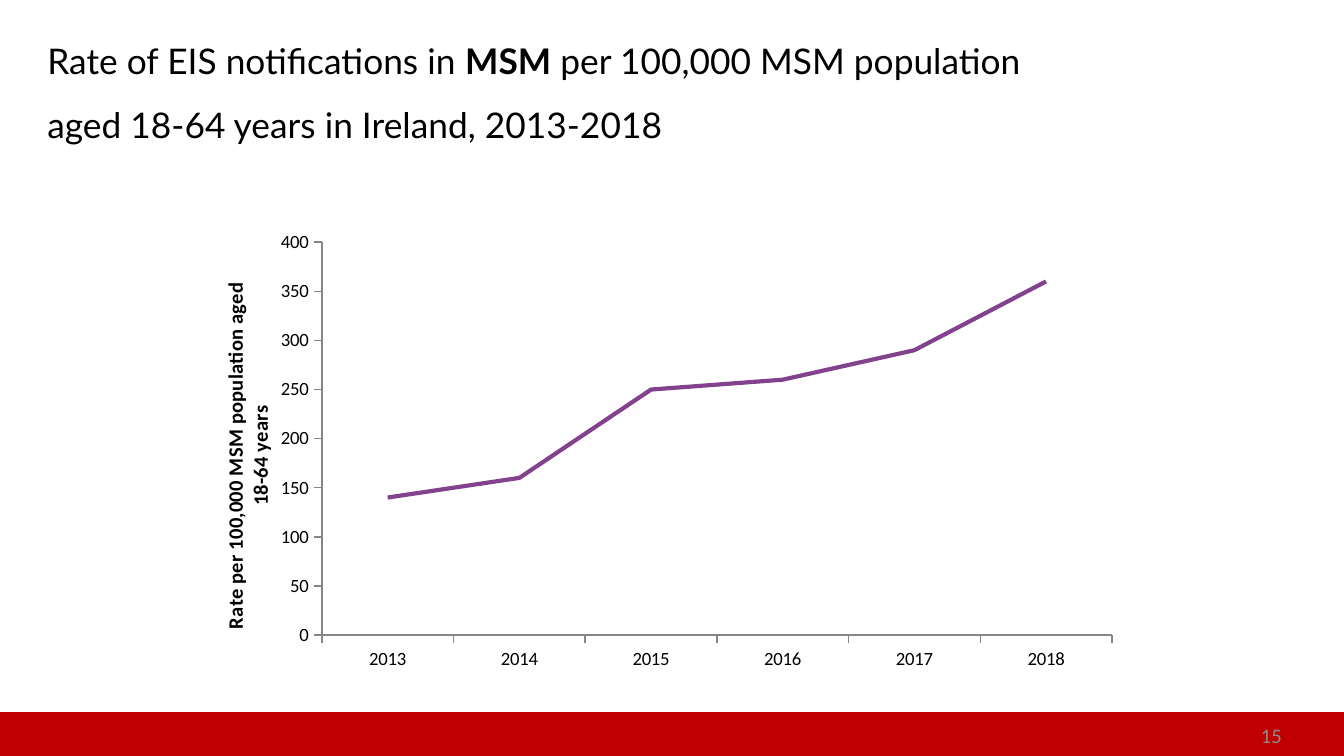
from typing import NamedTuple

from lxml.etree import SubElement
from pptx import Presentation
from pptx.chart.data import CategoryChartData
from pptx.dml.color import RGBColor
from pptx.enum.chart import XL_CHART_TYPE, XL_TICK_MARK
from pptx.enum.shapes import MSO_SHAPE
from pptx.enum.text import MSO_ANCHOR, PP_ALIGN
from pptx.oxml.ns import qn
from pptx.util import Emu, Pt

EMU_PER_PX = 914400 / 134.4
COLORS = {
    "bar": "C00000",
    "text": "000000",
    "page_number": "8C8C8C",
    "rate": "82428D",
    "axis": "868686",
}
RATES = {"2013": 140, "2014": 160, "2015": 250, "2016": 260, "2017": 290, "2018": 360}


class Area(NamedTuple):
    left: int
    top: int
    width: int
    height: int

    def emu(self) -> list[Emu]:
        return [px(length) for length in self]


class Piece(NamedTuple):
    text: str
    bold: bool = False


BAR = Area(0, 714, 1344, 42)
TITLE = Area(34, 20, 1042, 124)
PAGE_NUMBER = Area(982, 714, 313, 42)
CHART = Area(179, 224, 952, 457)
PLOT = Area(325, 243, 787, 394)
AXIS_TITLE = Area(213, 279, 45, 346)


def px(length: int) -> Emu:
    return Emu(round(length * EMU_PER_PX))


def color(name: str) -> RGBColor:
    return RGBColor.from_string(COLORS[name])


def style_font(font, typeface: str, size: float, color_name: str, bold: bool = False) -> None:
    font.name = typeface
    font.size = Pt(size)
    font.bold = bold
    font.color.rgb = color(color_name)


def add_bar(page) -> None:
    bar = page.shapes.add_shape(MSO_SHAPE.RECTANGLE, *BAR.emu())
    bar.shadow.inherit = False
    bar.fill.solid()
    bar.fill.fore_color.rgb = color("bar")
    bar.line.color.rgb = color("bar")
    bar.line.width = Pt(2)


def add_text(page, area: Area, pieces: list[Piece], typeface: str, size: float,
             color_name: str, alignment: PP_ALIGN, line_spacing: float = 1.0) -> None:
    box = page.shapes.add_textbox(*area.emu())
    frame = box.text_frame
    frame.word_wrap = True
    frame.vertical_anchor = MSO_ANCHOR.MIDDLE
    para = frame.paragraphs[0]
    para.alignment = alignment
    para.line_spacing = line_spacing
    for piece in pieces:
        span = para.add_run()
        span.text = piece.text
        style_font(span.font, typeface, size, color_name, piece.bold)


def place(parent, before: str, area: Area, with_size: bool) -> None:
    """Fix a chart part at an area of the slide, as fractions of the chart."""
    layout = parent.find(qn("c:layout"))
    if layout is None:
        layout = SubElement(parent, qn("c:layout"))
        parent.find(qn(before)).addprevious(layout)
    for child in list(layout):
        layout.remove(child)
    manual = SubElement(layout, qn("c:manualLayout"))
    settings = {"xMode": "edge", "yMode": "edge"}
    if with_size:
        settings = {"layoutTarget": "inner"} | settings
    settings["x"] = f"{(area.left - CHART.left) / CHART.width:.2f}"
    settings["y"] = f"{(area.top - CHART.top) / CHART.height:.2f}"
    if with_size:
        settings["w"] = f"{area.width / CHART.width:.2f}"
        settings["h"] = f"{area.height / CHART.height:.2f}"
    for tag, value in settings.items():
        SubElement(manual, qn(f"c:{tag}")).set("val", value)


def add_rate_chart(page) -> None:
    data = CategoryChartData(number_format="0")
    data.categories = list(RATES)
    data.add_series("Series 1", list(RATES.values()))
    chart = page.shapes.add_chart(XL_CHART_TYPE.LINE, *CHART.emu(), data).chart
    chart.has_legend = False
    chart.has_title = False
    style_font(chart.font, "Calibri", 10, "text")

    plot = chart.plots[0]
    plot.vary_by_categories = False
    series = plot.series[0]
    series.smooth = False
    series.format.line.color.rgb = color("rate")
    series.format.line.width = Pt(2.25)

    for axis in (chart.category_axis, chart.value_axis):
        axis.has_major_gridlines = False
        axis.major_tick_mark = XL_TICK_MARK.OUTSIDE
        axis.minor_tick_mark = XL_TICK_MARK.NONE
        axis.format.line.color.rgb = color("axis")
        axis.format.line.width = Pt(0.75)

    value_axis = chart.value_axis
    value_axis.minimum_scale = 0
    value_axis.maximum_scale = 400
    value_axis.major_unit = 50
    value_axis.tick_labels.number_format = "0"
    value_axis.tick_labels.number_format_is_linked = False
    para = value_axis.axis_title.text_frame.paragraphs[0]
    span = para.add_run()
    span.text = "Rate per 100,000 MSM population aged 18-64 years"
    style_font(span.font, "Calibri", 11, "text", bold=True)

    plot_area = chart.element.find(f".//{qn('c:plotArea')}")
    place(plot_area, "c:lineChart", PLOT, with_size=True)
    axis_title = plot_area.find(f"{qn('c:valAx')}/{qn('c:title')}")
    place(axis_title, "c:overlay", AXIS_TITLE, with_size=False)


def main() -> None:
    deck = Presentation()
    deck.slide_width, deck.slide_height = px(1344), px(756)
    page = deck.slides.add_slide(deck.slide_layouts[6])
    add_bar(page)
    title = [
        Piece("Rate of EIS notifications in "),
        Piece("MSM", bold=True),
        Piece(" per 100,000 MSM population aged 18-64 years in Ireland, 2013-2018"),
    ]
    add_text(page, TITLE, title, "Lato", 18.9, "text", PP_ALIGN.LEFT, line_spacing=1.5)
    add_text(page, PAGE_NUMBER, [Piece("15")], "Calibri", 11, "page_number", PP_ALIGN.RIGHT)
    add_rate_chart(page)
    deck.save("out.pptx")


if __name__ == "__main__":
    main()
